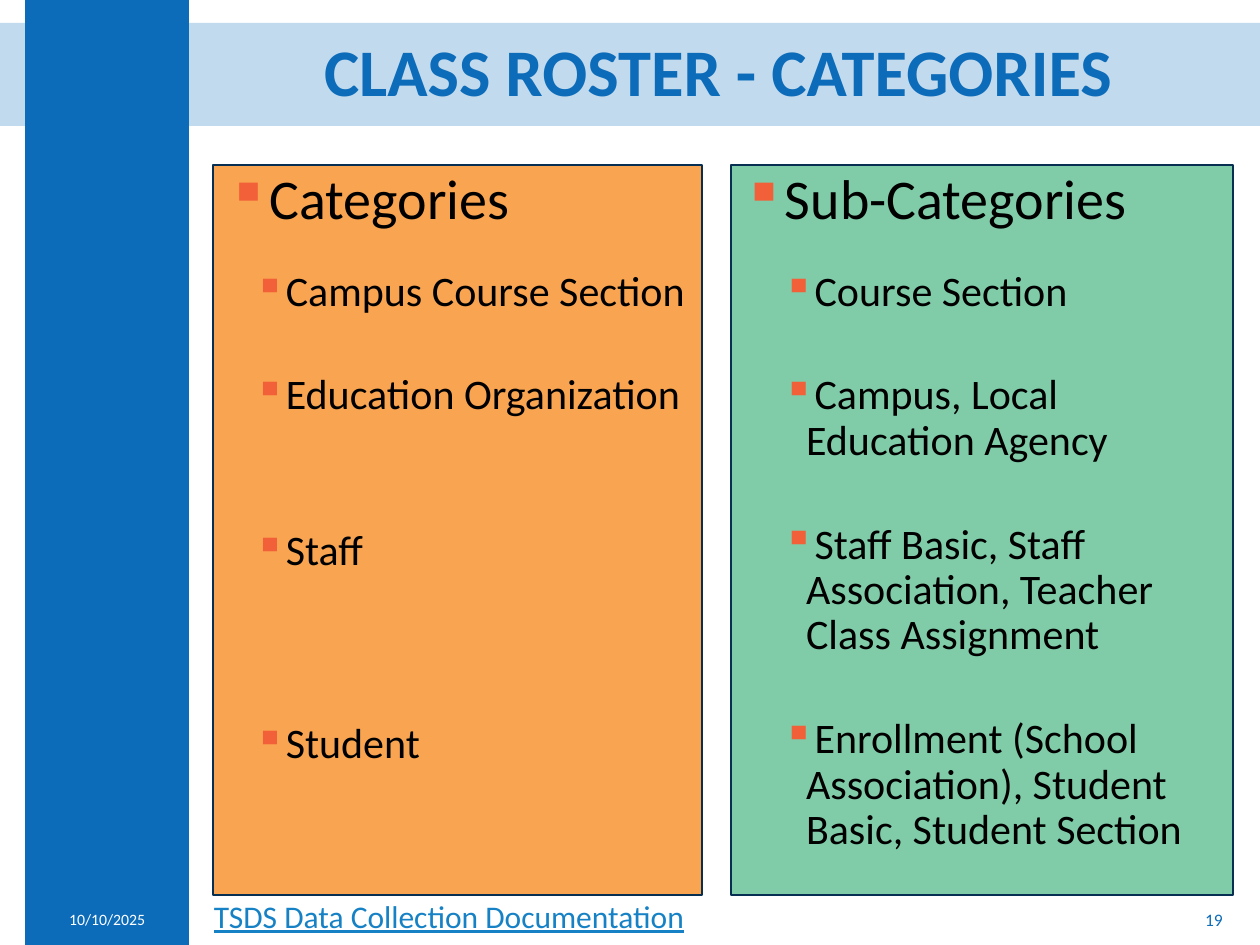
import lxml.etree
import pptx
import pptx.dml.color
import pptx.enum.shapes
import pptx.enum.text
import pptx.oxml.ns
import pptx.util

Cm = pptx.util.Cm
Pt = pptx.util.Pt
Align = pptx.enum.text.PP_ALIGN
Anchor = pptx.enum.text.MSO_ANCHOR
qn = pptx.oxml.ns.qn

BLUE = "0D6CB9"
PANEL_TOP = 3.33
PANEL_HEIGHT = 14.71
FOOTER_TOP = 18.03
FOOTER_HEIGHT = 1.02

CATEGORIES = [
    ("Campus Course Section", 22),
    ("Education Organization", 33),
    ("Staff", 63),
    ("Student", 84.5),
]
SUB_CATEGORIES = [
    ("Course Section", 22),
    ("Campus, Local Education Agency", 33),
    ("Staff Basic, Staff Association, Teacher Class Assignment", 33.5),
    ("Enrollment (School Association), Student Basic, Student Section", 33.5),
]


def rgb(value):
    return pptx.dml.color.RGBColor.from_string(value)


def style(paragraph, size, color, bold=None, underline=None):
    font = paragraph.font
    font.name = "Calibri"
    font.size = Pt(size)
    font.color.rgb = rgb(color)
    font.bold = bold
    font.underline = underline


def add_rectangle(slide, left, top, width, height, fill, line=None, alpha=None):
    shape = slide.shapes.add_shape(
        pptx.enum.shapes.MSO_SHAPE.RECTANGLE, Cm(left), Cm(top), Cm(width), Cm(height))
    shape.shadow.inherit = False
    shape.fill.solid()
    shape.fill.fore_color.rgb = rgb(fill)
    if line:
        shape.line.color.rgb = rgb(line)
        shape.line.width = Pt(1)
    else:
        shape.line.fill.background()
    if alpha:
        color = shape.fill._xPr.find(".//" + qn("a:srgbClr"))
        lxml.etree.SubElement(color, qn("a:alpha"), val=str(alpha * 1000))


def add_text_frame(slide, left, top, width, height, anchor=Anchor.TOP):
    box = slide.shapes.add_textbox(Cm(left), Cm(top), Cm(width), Cm(height))
    box.text_frame.word_wrap = True
    box.text_frame.vertical_anchor = anchor
    return box.text_frame


def add_label(slide, text, left, top, width, size, color,
              align=Align.LEFT, anchor=Anchor.MIDDLE, underline=None):
    frame = add_text_frame(slide, left, top, width, FOOTER_HEIGHT, anchor)
    paragraph = frame.paragraphs[0]
    paragraph.text = text
    paragraph.alignment = align
    style(paragraph, size, color, underline=underline)


def add_bullet(paragraph, margin, hanging):
    properties = paragraph._p.get_or_add_pPr()
    properties.set("marL", str(Cm(margin)))
    properties.set("indent", str(-Cm(hanging)))
    color = lxml.etree.SubElement(properties, qn("a:buClr"))
    lxml.etree.SubElement(color, qn("a:srgbClr"), val="F16038")
    lxml.etree.SubElement(properties, qn("a:buChar"), char="▪")


def add_list(slide, heading, items, left, width, height, margin, hanging):
    frame = add_text_frame(slide, left, PANEL_TOP, width, height)
    paragraph = frame.paragraphs[0]
    paragraph.text = heading
    add_bullet(paragraph, 0.48, 0.48)
    paragraph.line_spacing = 0.9
    style(paragraph, 32, "000000")
    for text, space_before in items:
        paragraph = frame.add_paragraph()
        paragraph.text = text
        paragraph.level = 1
        add_bullet(paragraph, margin, hanging)
        paragraph.line_spacing = 0.9
        paragraph.space_before = Pt(space_before)
        style(paragraph, 24, "000000")


def place_title(slide, text):
    title = slide.shapes.title
    title.left, title.top = Cm(3.56), Cm(0.48)
    title.width, title.height = Cm(21.84), Cm(2.08)
    title.text_frame.text = text
    title.text_frame.vertical_anchor = Anchor.MIDDLE
    paragraph = title.text_frame.paragraphs[0]
    paragraph.alignment = Align.CENTER
    paragraph.line_spacing = 0.9
    style(paragraph, 38, BLUE, bold=True)
    slide.shapes._spTree.append(title._element)


def main():
    presentation = pptx.Presentation()
    presentation.slide_width = Cm(25.4)
    presentation.slide_height = Cm(19.05)
    slide = presentation.slides.add_slide(presentation.slide_layouts[5])

    add_rectangle(slide, 0, 0.46, 25.4, 2.08, BLUE, alpha=25)
    add_rectangle(slide, 0.51, 0, 3.3, 19.05, BLUE)
    add_label(slide, "10/10/2025", 0.51, FOOTER_TOP, 3.3, 9, "FFFFFF", Align.CENTER)
    place_title(slide, "CLASS ROSTER - CATEGORIES")

    add_rectangle(slide, 14.73, PANEL_TOP, 10.13, PANEL_HEIGHT, "80CCA8", "062F51")
    add_rectangle(slide, 4.29, PANEL_TOP, 9.86, PANEL_HEIGHT, "F9A451", "062F51")
    add_list(slide, "Categories", CATEGORIES, 4.34, 9.8, 14.02, 1.02, 0.48)
    add_list(slide, "Sub-Categories", SUB_CATEGORIES, 14.73, 10.13, 14.3, 1.27, 0.46)

    add_label(slide, "19", 19.18, FOOTER_TOP, 5.72, 10, BLUE, Align.RIGHT)
    add_label(slide, "TSDS Data Collection Documentation", 4.06, 17.96, 10.19, 18,
              "1682C5", anchor=Anchor.TOP, underline=True)
    presentation.save("out.pptx")


if __name__ == "__main__":
    main()
